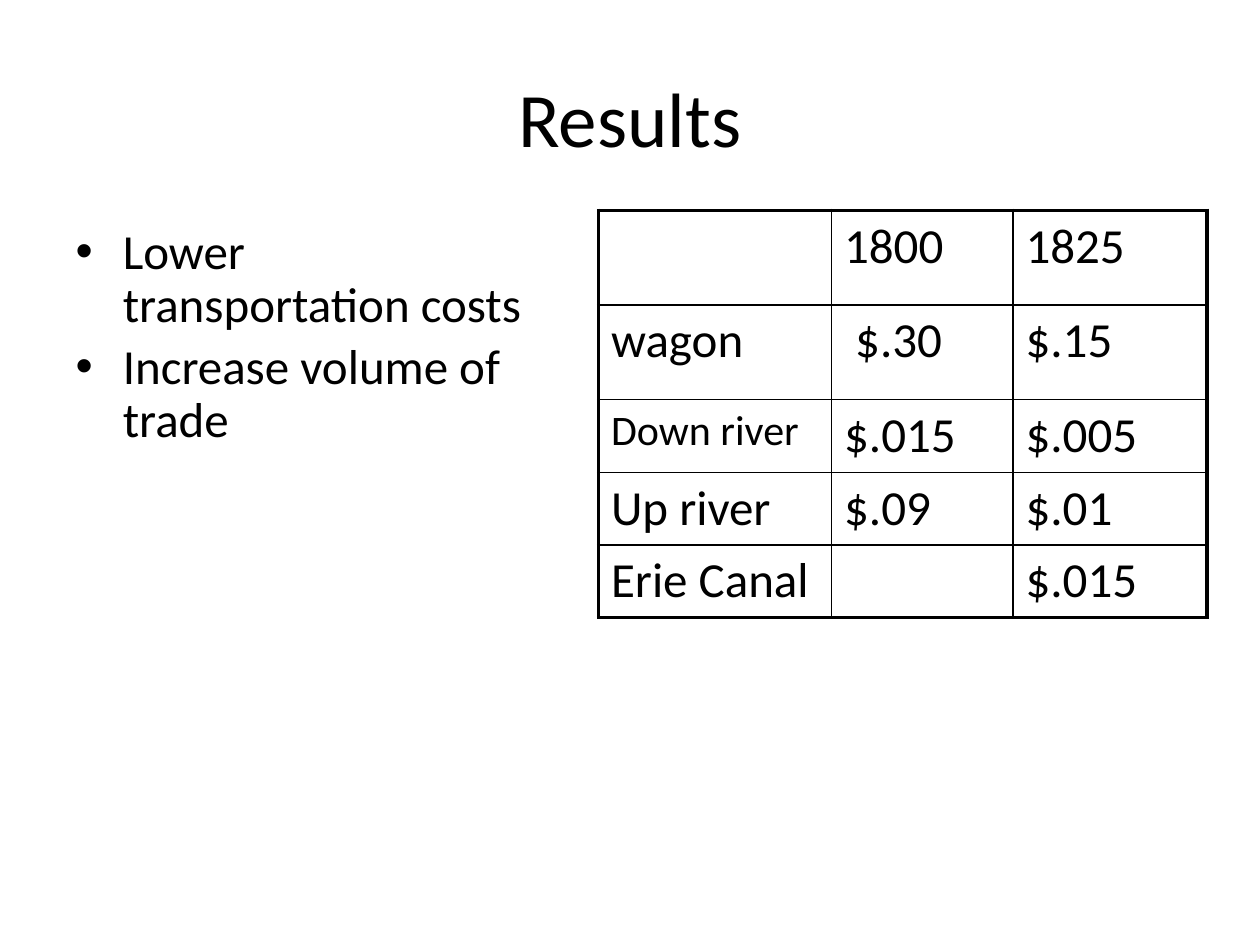
"""Build the Results slide: a bulleted list beside a table of transport costs."""

from dataclasses import dataclass

import lxml.etree
import pptx
import pptx.dml.color
import pptx.enum.text
import pptx.oxml.ns
import pptx.util

Inches = pptx.util.Inches
Pt = pptx.util.Pt

COLORS = {"ink": "000000"}
FONT = "Calibri"
OUTER, INNER = 2.25, 1


@dataclass
class CostRow:
    mode: str
    cost_1800: str
    cost_1825: str
    height: float
    mode_size: int = 28


COLUMN_WIDTHS = (1.85, 1.44, 1.54)
COSTS = [
    CostRow("", "1800", "1825", 0.75),
    CostRow("wagon", " $.30", "$.15", 0.75),
    CostRow("Down river", "$.015", "$.005", 0.58, 24),
    CostRow("Up river", "$.09", "$.01", 0.57),
    CostRow("Erie Canal", "", "$.015", 0.57),
]
RESULTS = ("Lower transportation costs", "Increase volume of trade")


def set_all(target, values: dict) -> None:
    for name, value in values.items():
        setattr(target, name, value)


def write(paragraph, text: str, size: int) -> None:
    run = paragraph.add_run()
    run.text = text
    set_all(run.font, {"name": FONT, "size": Pt(size)})
    run.font.color.rgb = pptx.dml.color.RGBColor.from_string(COLORS["ink"])


def place(shape, left: float, top: float, width: float, height: float) -> None:
    lengths = {"left": left, "top": top, "width": width, "height": height}
    set_all(shape, {name: Inches(value) for name, value in lengths.items()})


def add_border(cell, side: str, width: float) -> None:
    qn = pptx.oxml.ns.qn
    properties = cell._tc.get_or_add_tcPr()
    line = lxml.etree.SubElement(properties, qn(f"a:ln{side}"), w=str(Pt(width)))
    fill = lxml.etree.SubElement(line, qn("a:solidFill"))
    lxml.etree.SubElement(fill, qn("a:srgbClr"), val=COLORS["ink"])


def add_title(slide) -> None:
    title = slide.shapes.title
    place(title, 0.5, 0.3, 9, 1.25)
    title.text_frame.vertical_anchor = pptx.enum.text.MSO_ANCHOR.MIDDLE
    paragraph = title.text_frame.paragraphs[0]
    paragraph.alignment = pptx.enum.text.PP_ALIGN.CENTER
    write(paragraph, "Results", 44)


def add_results(slide) -> None:
    body = slide.placeholders[1]
    place(body, 0.5, 1.75, 3.83, 4.95)
    frame = body.text_frame
    frame.auto_size = pptx.enum.text.MSO_AUTO_SIZE.NONE
    for index, result in enumerate(RESULTS):
        paragraph = frame.add_paragraph() if index else frame.paragraphs[0]
        spacing = {"line_spacing": 0.9, "space_before": Pt(5.6 if index else 0)}
        set_all(paragraph, spacing)
        write(paragraph, result, 28)


def add_costs(slide) -> None:
    last_row, last_column = len(COSTS) - 1, len(COLUMN_WIDTHS) - 1
    frame = slide.shapes.add_table(
        len(COSTS), len(COLUMN_WIDTHS), Inches(4.75), Inches(1.67),
        Inches(sum(COLUMN_WIDTHS)), Inches(sum(cost.height for cost in COSTS)),
    )
    table = frame.table
    set_all(table, {"first_row": False, "horz_banding": False})
    for column, width in zip(table.columns, COLUMN_WIDTHS):
        column.width = Inches(width)
    for r, cost in enumerate(COSTS):
        table.rows[r].height = Inches(cost.height)
        for c, text in enumerate((cost.mode, cost.cost_1800, cost.cost_1825)):
            cell = table.cell(r, c)
            on_edge = {"L": c == 0, "R": c == last_column,
                       "T": r == 0, "B": r == last_row}
            for side, outer in on_edge.items():
                add_border(cell, side, OUTER if outer else INNER)
            cell.fill.background()
            if text:
                size = 28 if c else cost.mode_size
                write(cell.text_frame.paragraphs[0], text, size)


def main() -> None:
    deck = pptx.Presentation()
    set_all(deck, {"slide_width": Inches(10), "slide_height": Inches(7.5)})
    slide = deck.slides.add_slide(deck.slide_layouts[1])
    add_title(slide)
    add_results(slide)
    add_costs(slide)
    deck.save("out.pptx")


if __name__ == "__main__":
    main()
